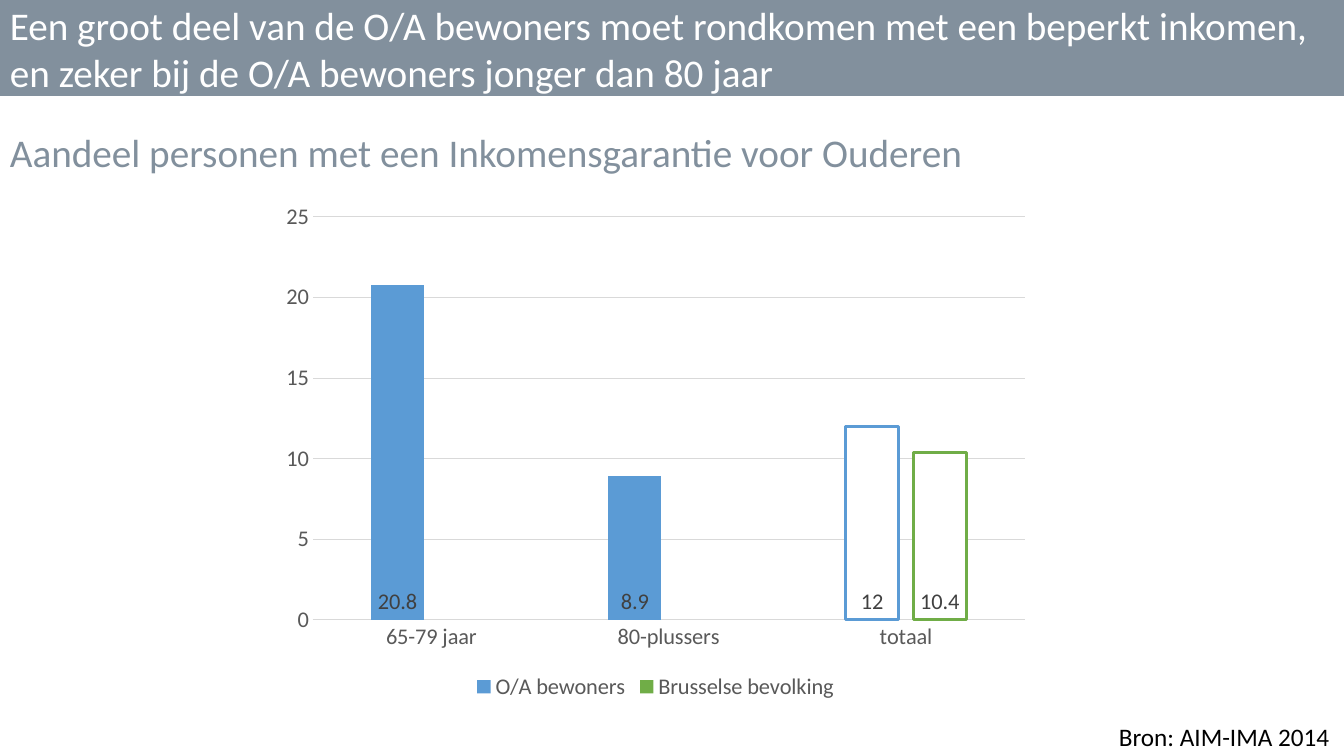
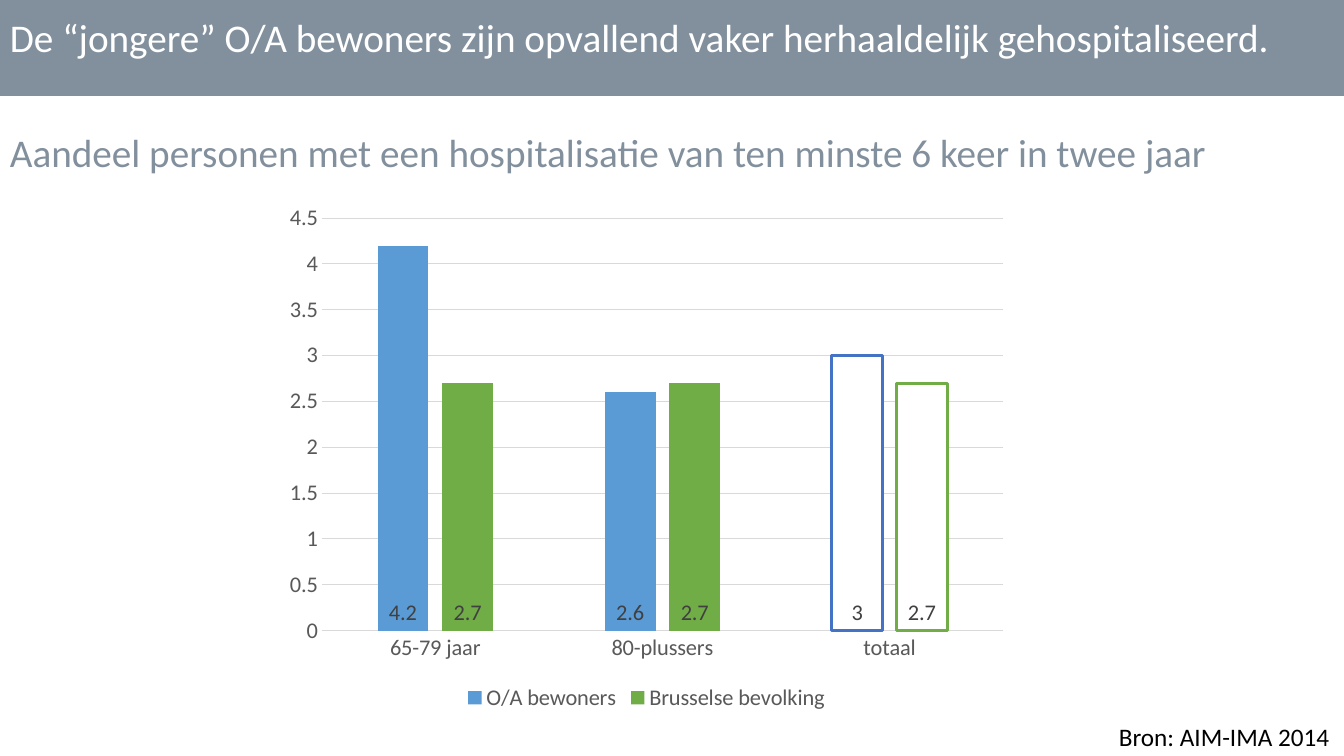
"""Build two slides comparing residents with the Brussels population."""
from dataclasses import dataclass

from pptx import Presentation
from pptx.chart.data import CategoryChartData
from pptx.dml.color import RGBColor
from pptx.enum.chart import XL_CHART_TYPE, XL_LABEL_POSITION, XL_LEGEND_POSITION, XL_TICK_MARK
from pptx.enum.shapes import MSO_SHAPE
from pptx.enum.text import PP_ALIGN
from pptx.util import Emu, Pt

COLUMNS = XL_CHART_TYPE.COLUMN_CLUSTERED
INSIDE_BASE = XL_LABEL_POSITION.INSIDE_BASE
BOTTOM = XL_LEGEND_POSITION.BOTTOM
NO_TICKS = XL_TICK_MARK.NONE
RECTANGLE = MSO_SHAPE.RECTANGLE
LEFT, RIGHT = PP_ALIGN.LEFT, PP_ALIGN.RIGHT

PX_PER_INCH = 100.8
PAGE_WIDTH, PAGE_HEIGHT = 1344, 756
BAND_HEIGHT = 96
FONT = "Calibri"
SLATE, WHITE, BLACK = "82909D", "FFFFFF", "000000"
BLUE, GREEN, ROYAL = "5B9BD5", "70AD47", "4472C4"
AXIS_TEXT, LABEL_TEXT, GRID = "595959", "404040", "D9D9D9"
CATEGORIES = ("65-79 jaar", "80-plussers", "totaal")
TOTAL_INDEX = CATEGORIES.index("totaal")
SOURCE = "Bron: AIM-IMA 2014 "


@dataclass(frozen=True)
class Area:
    left: int
    top: int
    width: int
    height: int

    def emu(self) -> tuple:
        return tuple(px(value) for value in (self.left, self.top, self.width, self.height))


@dataclass(frozen=True)
class Series:
    name: str
    values: tuple
    color: str
    total_outline: str


@dataclass(frozen=True)
class ChartPage:
    title: str
    title_area: Area
    subtitle: str
    chart_area: Area
    axis_maximum: float
    axis_step: float
    series: tuple


PAGES = (
    ChartPage(
        "Een groot deel van de O/A bewoners moet rondkomen met een beperkt inkomen, "
        "en zeker bij de O/A bewoners jonger dan 80 jaar",
        Area(0, -4, PAGE_WIDTH, 105),
        "Aandeel personen met een Inkomensgarantie voor Ouderen",
        Area(271, 193, 769, 512), 25, 5,
        (Series("O/A bewoners", (20.8, 8.9, 12), BLUE, BLUE),
         Series("Brusselse bevolking", (None, None, 10.4), GREEN, GREEN)),
    ),
    ChartPage(
        "De “jongere” O/A bewoners zijn opvallend vaker herhaaldelijk gehospitaliseerd.",
        Area(0, 8, PAGE_WIDTH, 57),
        "Aandeel personen met een hospitalisatie van ten minste 6 keer in twee jaar",
        Area(275, 194, 743, 522), 4.5, 0.5,
        (Series("O/A bewoners", (4.2, 2.6, 3), BLUE, ROYAL),
         Series("Brusselse bevolking", (2.7, 2.7, 2.7), GREEN, GREEN)),
    ),
)


def px(value: int) -> Emu:
    return Emu(round(value * 914400 / PX_PER_INCH))


def rgb(color: str) -> RGBColor:
    return RGBColor.from_string(color)


def paint(fill, color: str) -> None:
    fill.solid()
    fill.fore_color.rgb = rgb(color)


def style_font(font, size: int, color: str) -> None:
    font.name = FONT
    font.size = Pt(size)
    font.color.rgb = rgb(color)


def style_line(line, color: str, width: float) -> None:
    line.color.rgb = rgb(color)
    line.width = Pt(width)


def add_band(page) -> None:
    band = page.shapes.add_shape(RECTANGLE, *Area(0, 0, PAGE_WIDTH, BAND_HEIGHT).emu())
    band.shadow.inherit = False
    paint(band.fill, SLATE)
    band.line.fill.background()


def add_text(page, text: str, area: Area, size: int, color: str, align=LEFT) -> None:
    box = page.shapes.add_textbox(*area.emu())
    box.text_frame.word_wrap = True
    para = box.text_frame.paragraphs[0]
    para.alignment = align
    span = para.add_run()
    span.text = text
    style_font(span.font, size, color)


def style_series(plot_series, series: Series) -> None:
    plot_series.invert_if_negative = False
    paint(plot_series.format.fill, series.color)
    total = plot_series.points[TOTAL_INDEX].format
    paint(total.fill, WHITE)
    style_line(total.line, series.total_outline, 2.25)
    labels = plot_series.data_labels
    labels.show_value = True
    labels.position = INSIDE_BASE
    style_font(labels.font, 16, LABEL_TEXT)


def style_axes(chart, content: ChartPage) -> None:
    categories, values = chart.category_axis, chart.value_axis
    for axis in (categories, values):
        axis.major_tick_mark = axis.minor_tick_mark = NO_TICKS
        style_font(axis.tick_labels.font, 16, AXIS_TEXT)
    style_line(categories.format.line, GRID, 0.75)
    values.format.line.fill.background()
    values.has_major_gridlines = True
    style_line(values.major_gridlines.format.line, GRID, 0.75)
    values.minimum_scale = 0
    values.maximum_scale = content.axis_maximum
    values.major_unit = content.axis_step


def add_column_chart(page, content: ChartPage) -> None:
    data = CategoryChartData()
    data.categories = CATEGORIES
    for series in content.series:
        data.add_series(series.name, series.values)
    chart = page.shapes.add_chart(COLUMNS, *content.chart_area.emu(), data).chart
    style_font(chart.font, 10, BLACK)
    chart.has_title = False
    chart.has_legend = True
    chart.legend.position = BOTTOM
    chart.legend.include_in_layout = False
    style_font(chart.legend.font, 16, AXIS_TEXT)
    plot = chart.plots[0]
    plot.vary_by_categories = False
    plot.gap_width, plot.overlap = 219, -27
    for plot_series, series in zip(plot.series, content.series):
        style_series(plot_series, series)
    style_axes(chart, content)


def add_page(deck, content: ChartPage) -> None:
    page = deck.slides.add_slide(deck.slide_layouts[6])
    add_band(page)
    add_text(page, SOURCE, Area(618, 716, 727, 40), 18, BLACK, RIGHT)
    add_text(page, content.subtitle, Area(0, 123, PAGE_WIDTH, 57), 28, SLATE)
    add_text(page, content.title, content.title_area, 28, WHITE)
    add_column_chart(page, content)


def main() -> None:
    deck = Presentation()
    deck.slide_width, deck.slide_height = px(PAGE_WIDTH), px(PAGE_HEIGHT)
    for content in PAGES:
        add_page(deck, content)
    deck.save("out.pptx")


if __name__ == "__main__":
    main()
